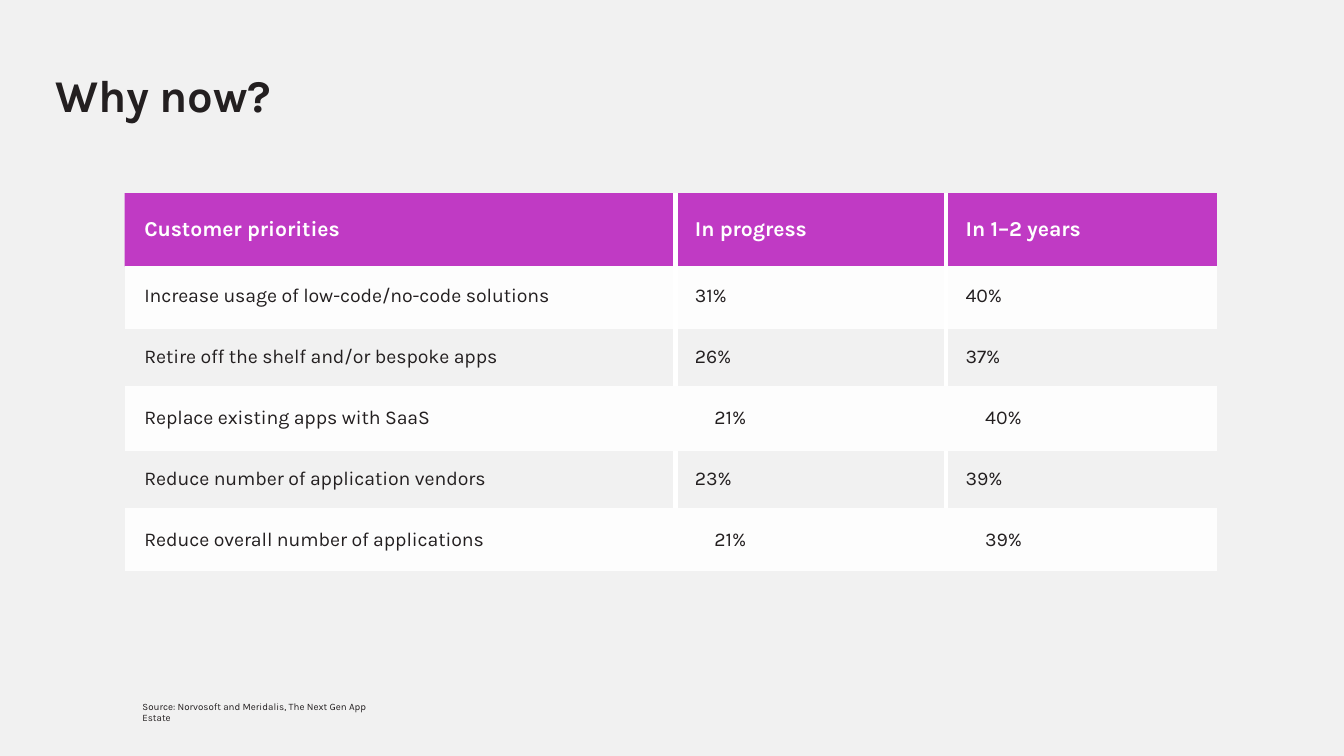
from lxml.etree import SubElement as Sub
from pptx import Presentation
from pptx.dml.color import RGBColor
from pptx.enum.shapes import MSO_SHAPE as Shape
from pptx.enum.text import MSO_ANCHOR as Anchor, MSO_AUTO_SIZE as Auto, PP_ALIGN as Align
from pptx.oxml import parse_xml
from pptx.oxml.ns import nsdecls, qn
from pptx.util import Pt

FONT = "Karla"
INK = RGBColor(0x23, 0x1F, 0x20)
WHITE = RGBColor(0xFF, 0xFF, 0xFF)
PURPLE = RGBColor(0xC0, 0x3A, 0xC4)
PAGE = RGBColor(0xF1, 0xF1, 0xF1)
PALE = RGBColor(0xFD, 0xFD, 0xFD)

NO_STYLE = "{2D5ABB26-0587-4C30-8999-92F81FD0307C}"
WIDE, HIGH = 2199, 1237
LEFT, TOP = 204, 316
COLS = [901, 443, 443]
INDENT = 32
# Each row: height, top inset, fill, merged, texts
ROWS = [
    (120, 39, PURPLE, False, ["Customer priorities", "In progress", "In 1–2 years"]),
    (102, 29, PALE, False, ["Increase usage of low-code/no-code solutions", "31%", "40%"]),
    (93, 27, PAGE, False, ["Retire off the shelf and/or bespoke apps", "26%", "37%"]),
    (107, 34, PALE, True, ["Replace existing apps with SaaS", "21%", "40%"]),
    (93, 27, PAGE, False, ["Reduce number of application vendors", "23%", "39%"]),
    (103, 34, PALE, True, ["Reduce overall number of applications", "21%", "39%"]),
]


def px(n):
    """Turn px, 100 to the inch, into EMU."""
    return n * 9144


def style(para, size, color, bold=False, track=0):
    """Format the runs; track is letter spacing in hundredths of a point."""
    para.alignment = Align.LEFT
    for run in para.runs:
        font = run.font
        font.name, font.size, font.bold = FONT, Pt(size), bold
        font.color.rgb = color
        run._r.get_or_add_rPr().set("spc", str(track))


def fill_frame(frame, text, size, bold=False, track=0):
    frame.text = text
    frame.word_wrap = True
    frame.auto_size = Auto.SHAPE_TO_FIT_TEXT
    frame.vertical_anchor = Anchor.TOP
    frame.margin_left = frame.margin_right = frame.margin_bottom = 0
    frame.margin_top = px(2)
    style(frame.paragraphs[0], size, INK, bold, track)


def add_panel(shapes, left, top, width, height, color):
    panel = shapes.add_shape(Shape.RECTANGLE, *map(px, (left, top, width, height)))
    panel.shadow.inherit = False
    panel.fill.solid()
    panel.fill.fore_color.rgb = color
    panel.line.fill.background()


def add_title(slide, text):
    title = slide.shapes.title
    title.left, title.top, title.width, title.height = map(px, (91, 108, 392, 94))
    fill_frame(title.text_frame, text, 53.5, True, -40)
    # Bring the title in front of the page panel
    slide.shapes._spTree.append(title._element)


def add_note(slide, text):
    box = slide.shapes.add_textbox(*map(px, (233, 1144, 396, 22)))
    fill_frame(box.text_frame, text, 11.5)


def add_tabs(para):
    """Put a tab stop at the text edge of every column after the first."""
    tabs = Sub(para._p.get_or_add_pPr(), qn("a:tabLst"))
    for i in range(1, len(COLS)):
        Sub(tabs, qn("a:tab"), pos=str(px(sum(COLS[:i]) + INDENT)), algn="l")


def add_gaps(cell, col):
    """Draw white lines on the cell's inner sides."""
    sides = ["L"] * (col > 0) + ["R"] * (col < len(COLS) - 1)
    for i, side in enumerate(sides):
        line = parse_xml(
            f'<a:ln{side} {nsdecls("a")} w="{Pt(6)}"><a:solidFill>'
            f'<a:srgbClr val="{WHITE}"/></a:solidFill></a:ln{side}>')
        cell._tc.get_or_add_tcPr().insert(i, line)


def fill_cell(cell, text, top, fill, head):
    cell.fill.solid()
    cell.fill.fore_color.rgb = fill
    cell.margin_left = cell.margin_right = cell.margin_bottom = 0
    cell.margin_top = px(top)
    cell.vertical_anchor = Anchor.TOP
    cell.text_frame.text = text
    para = cell.text_frame.paragraphs[0]
    if head:
        style(para, 25, WHITE, True, -5)
    else:
        style(para, 23, INK, False, -12)
    para._p.get_or_add_pPr().set("marL", str(px(INDENT)))


def add_grid(slide):
    high = sum(row[0] for row in ROWS)
    frame = slide.shapes.add_table(
        len(ROWS), len(COLS), *map(px, (LEFT, TOP, sum(COLS), high)))
    table = frame.table
    table.horz_banding = False
    table._tbl.tblPr.find(qn("a:tableStyleId")).text = NO_STYLE
    for col, width in zip(table.columns, COLS):
        col.width = px(width)
    for r, (height, top, fill, merged, texts) in enumerate(ROWS):
        table.rows[r].height = px(height)
        if merged:
            cell = table.cell(r, 0)
            cell.merge(table.cell(r, len(COLS) - 1))
            fill_cell(cell, "\t".join(texts), top, fill, False)
            add_tabs(cell.text_frame.paragraphs[0])
            continue
        for c, text in enumerate(texts):
            cell = table.cell(r, c)
            fill_cell(cell, text, top, fill, r == 0)
            add_gaps(cell, c)


def main():
    deck = Presentation()
    deck.slide_width, deck.slide_height = px(WIDE), px(HIGH)
    slide = deck.slides.add_slide(deck.slide_layouts[5])
    add_panel(slide.shapes, 0, 0, WIDE, HIGH, PAGE)
    add_title(slide, "Why now?")
    add_note(slide, "Source: Norvosoft and Meridalis, The Next Gen App Estate")
    add_panel(slide.shapes, LEFT, TOP, 898, ROWS[0][0], PURPLE)
    add_grid(slide)
    deck.save("out.pptx")


if __name__ == "__main__":
    main()
